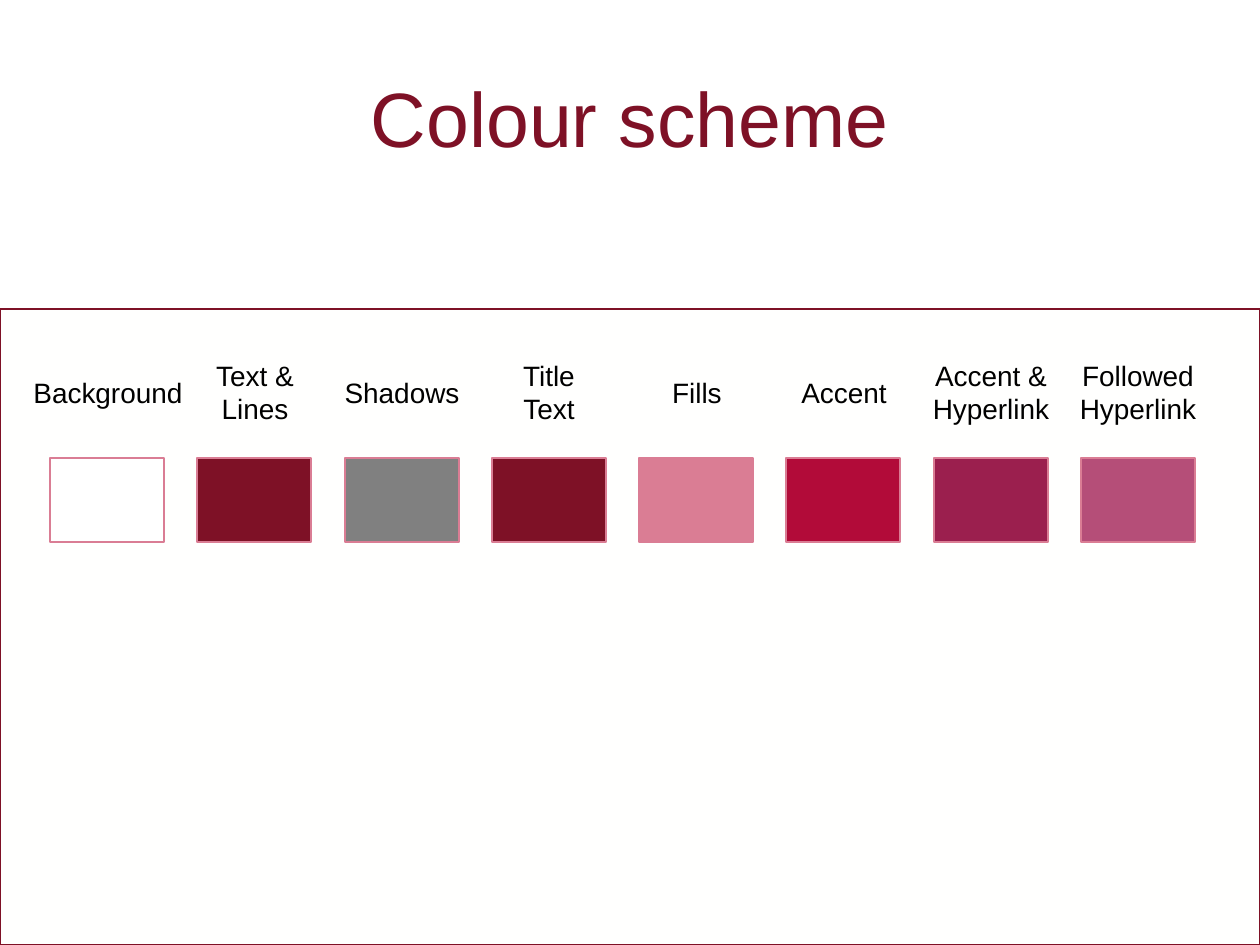
"""Build a slide that shows the eight named colours of a colour scheme."""
from dataclasses import dataclass

from pptx import Presentation
from pptx.dml.color import RGBColor
from pptx.enum.shapes import MSO_SHAPE
from pptx.enum.text import MSO_ANCHOR, MSO_AUTO_SIZE, PP_ALIGN
from pptx.slide import Slide
from pptx.util import Emu, Pt


@dataclass(frozen=True)
class Theme:
    font: str = "Arial"
    title_size: int = 44
    label_size: int = 16
    line_width: float = 0.75
    title: str = "7E1126"
    label: str = "000000"
    panel_fill: str = "FFFFFE"
    panel_line: str = "7E1126"
    swatch_line: str = "DA7D94"


@dataclass(frozen=True)
class Box:
    left: int
    top: int
    width: int
    height: int


@dataclass(frozen=True)
class Swatch:
    label: str
    label_width: int
    colour: str


THEME = Theme()
PIXELS_PER_INCH = 126
SLIDE_WIDTH, SLIDE_HEIGHT = 1260, 945
TITLE = Box(63, 38, 1134, 157)
PANEL = Box(0, 309, 1260, 636)
SWATCH_TOP, SWATCH_WIDTH, SWATCH_HEIGHT = 458, 114, 84
SWATCH_LEFTS = (50, 1081)
LABEL_CENTRES = (108, 1138)
LABEL_MIDDLE = 392
LABEL_HEIGHTS = {1: 47, 2: 81}
SWATCHES = [
    Swatch("Background", 176, "FFFFFF"),
    Swatch("Text &\nLines", 108, "7E1126"),
    Swatch("Shadows", 142, "808080"),
    Swatch("Title\vText", 82, "7E1126"),
    Swatch("Fills", 78, "DA7D94"),
    Swatch("Accent", 114, "B20B39"),
    Swatch("Accent &\nHyperlink", 146, "9B1F4E"),
    Swatch("Followed\nHyperlink", 146, "B54E78"),
]


def px(length: int) -> Emu:
    """Turn pixels into EMU."""
    return Emu(round(length * 914400 / PIXELS_PER_INCH))


def place(box: Box) -> tuple[Emu, Emu, Emu, Emu]:
    """Return the position and size of a box in EMU."""
    return px(box.left), px(box.top), px(box.width), px(box.height)


def spread(ends: tuple[int, int], index: int) -> int:
    """Return one of the evenly spaced column positions between two ends."""
    first, last = ends
    return first + round(index * (last - first) / (len(SWATCHES) - 1))


def add_rectangle(slide: Slide, box: Box, fill: str, line: str) -> None:
    """Draw a filled, outlined rectangle."""
    shape = slide.shapes.add_shape(MSO_SHAPE.RECTANGLE, *place(box))
    shape.shadow.inherit = False
    shape.fill.solid()
    shape.fill.fore_color.rgb = RGBColor.from_string(fill)
    shape.line.color.rgb = RGBColor.from_string(line)
    shape.line.width = Pt(THEME.line_width)


def add_text(slide: Slide, box: Box, text: str, *, size: int, colour: str,
             wrap: bool = False, anchor: MSO_ANCHOR = MSO_ANCHOR.TOP,
             auto_size: MSO_AUTO_SIZE = MSO_AUTO_SIZE.SHAPE_TO_FIT_TEXT) -> None:
    """Write centred text, one paragraph a line."""
    frame = slide.shapes.add_textbox(*place(box)).text_frame
    frame.text = text
    frame.word_wrap = wrap
    frame.auto_size = auto_size
    frame.vertical_anchor = anchor
    for paragraph in frame.paragraphs:
        paragraph.alignment = PP_ALIGN.CENTER
        for run in paragraph.runs:
            run.font.name = THEME.font
            run.font.size = Pt(size)
            run.font.color.rgb = RGBColor.from_string(colour)


def add_swatch(slide: Slide, swatch: Swatch, index: int) -> None:
    """Draw one colour sample with its label above it."""
    box = Box(spread(SWATCH_LEFTS, index), SWATCH_TOP, SWATCH_WIDTH, SWATCH_HEIGHT)
    add_rectangle(slide, box, swatch.colour, THEME.swatch_line)
    height = LABEL_HEIGHTS[len(swatch.label.splitlines())]
    label_box = Box(spread(LABEL_CENTRES, index) - swatch.label_width // 2,
                    LABEL_MIDDLE - height // 2, swatch.label_width, height)
    add_text(slide, label_box, swatch.label,
             size=THEME.label_size, colour=THEME.label)


def main() -> None:
    """Build and save the presentation."""
    presentation = Presentation()
    presentation.slide_width = px(SLIDE_WIDTH)
    presentation.slide_height = px(SLIDE_HEIGHT)
    slide = presentation.slides.add_slide(presentation.slide_layouts[6])
    add_text(slide, TITLE, "Colour scheme", size=THEME.title_size,
             colour=THEME.title, wrap=True, anchor=MSO_ANCHOR.MIDDLE,
             auto_size=MSO_AUTO_SIZE.NONE)
    add_rectangle(slide, PANEL, THEME.panel_fill, THEME.panel_line)
    for index, swatch in enumerate(SWATCHES):
        add_swatch(slide, swatch, index)
    presentation.save("out.pptx")


if __name__ == "__main__":
    main()
